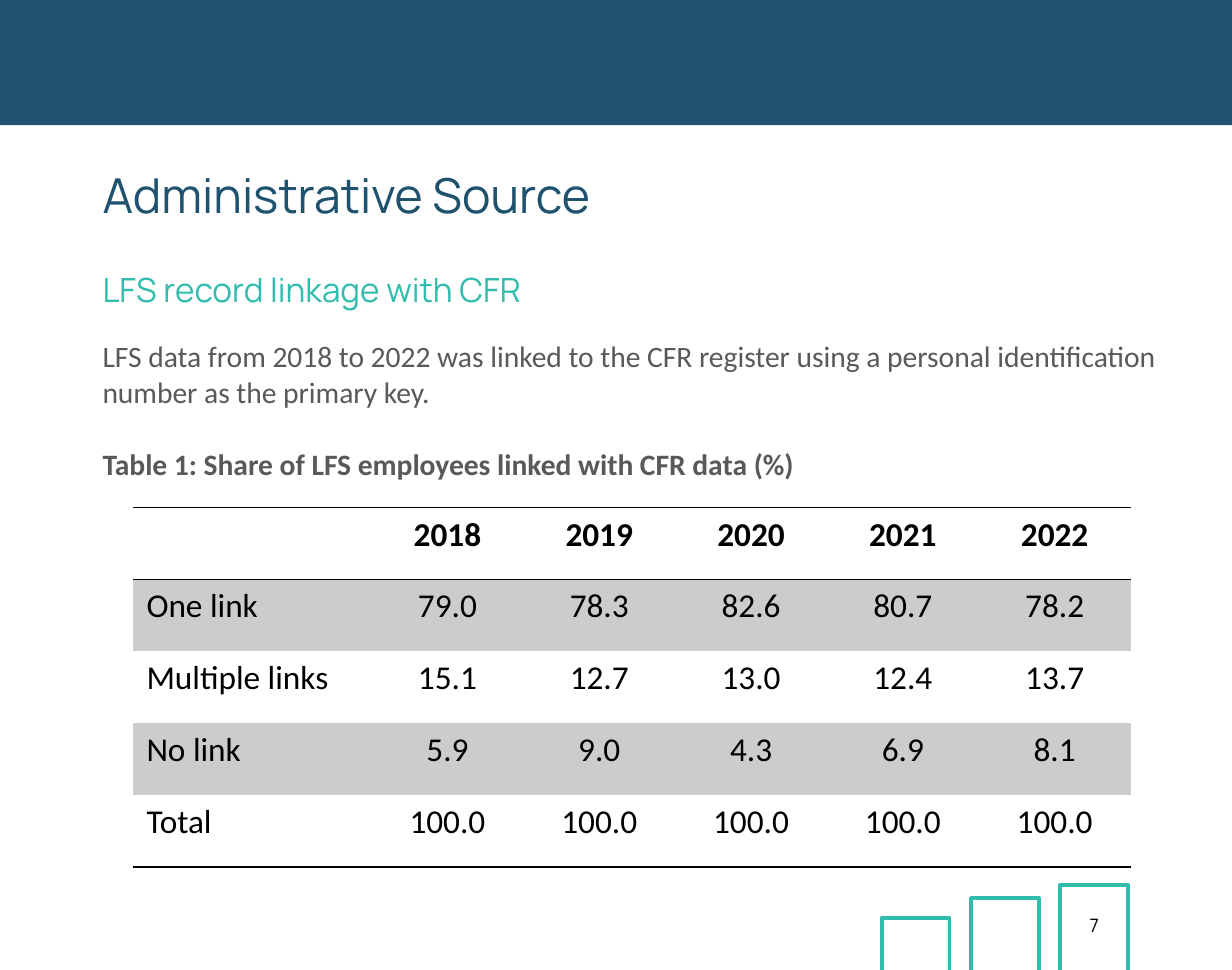
"""Build the slide on linking LFS records with the CFR register."""
from dataclasses import dataclass

from lxml import etree
from pptx import Presentation
from pptx import util as u
from pptx.dml.color import RGBColor
from pptx.enum import shapes, text
from pptx.oxml.ns import qn


@dataclass(frozen=True)
class Theme:
    navy: str = "1E526E"
    teal: str = "32BCAD"
    grey: str = "595959"
    black: str = "000000"
    band: str = "CCCCCC"
    heading_font: str = "Manrope"
    body_font: str = "Calibri"
    title: int = 26
    subtitle: int = 18
    body: int = 16
    cell: int = 18
    number: int = 10
    bar_line: int = 2
    rule: int = 1


THEME = Theme()
LEFT = 0.77
BAR_WIDTH, BAR_HEIGHT = 0.51, 0.81
BAR_LEFTS_TOPS = [(6.62, 6.89), (7.29, 6.74), (7.96, 6.64)]
LABEL_WIDTH, YEAR_WIDTH, ROW_HEIGHT = 1.79, 1.14, 0.54
LINKAGE = [
    ["", "2018", "2019", "2020", "2021", "2022"],
    ["One link", "79.0", "78.3", "82.6", "80.7", "78.2"],
    ["Multiple links", "15.1", "12.7", "13.0", "12.4", "13.7"],
    ["No link", "5.9", "9.0", "4.3", "6.9", "8.1"],
    ["Total", "100.0", "100.0", "100.0", "100.0", "100.0"],
]


def rgb(value):
    return RGBColor.from_string(value)


def style(p, size, font, color, bold=False):
    for r in p.runs:
        r.font.size = u.Pt(size)
        r.font.name = font
        r.font.color.rgb = rgb(color)
        r.font.bold = bold


def add_box(s, left, top, width, height, fill=None, line=None):
    sp = s.shapes.add_shape(shapes.MSO_SHAPE.RECTANGLE, u.Inches(left), u.Inches(top),
                            u.Inches(width), u.Inches(height))
    sp.shadow.inherit = False
    if fill:
        sp.fill.solid()
        sp.fill.fore_color.rgb = rgb(fill)
    else:
        sp.fill.background()
    if line:
        sp.line.color.rgb = rgb(line)
        sp.line.width = u.Pt(THEME.bar_line)
    else:
        sp.line.fill.background()


def add_text(s, left, top, width, height, lines, size, font, color):
    sp = s.shapes.add_textbox(u.Inches(left), u.Inches(top), u.Inches(width), u.Inches(height))
    tf = sp.text_frame
    tf.word_wrap = True
    tf.margin_left = tf.margin_right = tf.margin_top = tf.margin_bottom = 0
    tf.text = "\n".join(lines)
    for p in tf.paragraphs:
        style(p, size, font, color)
    return tf


def set_borders(cell, ruled_sides):
    tc_pr = cell._tc.get_or_add_tcPr()
    for side in "LRTB":
        ln = etree.SubElement(tc_pr, qn(f"a:ln{side}"))
        if side in ruled_sides:
            ln.set("w", str(u.Pt(THEME.rule)))
            fill = etree.SubElement(ln, qn("a:solidFill"))
            etree.SubElement(fill, qn("a:srgbClr")).set("val", THEME.black)
        else:
            ln.set("w", "0")
            etree.SubElement(ln, qn("a:noFill"))


def add_linkage_table(s, left, top, rows):
    row_count, col_count = len(rows), len(rows[0])
    width = LABEL_WIDTH + YEAR_WIDTH * (col_count - 1)
    table = s.shapes.add_table(row_count, col_count, u.Inches(left), u.Inches(top),
                               u.Inches(width), u.Inches(ROW_HEIGHT * row_count)).table
    table.first_row = table.horz_banding = False
    for j, column in enumerate(table.columns):
        column.width = u.Inches(YEAR_WIDTH if j else LABEL_WIDTH)
    ruled = {0: "TB", 1: "T", row_count - 1: "B"}
    for i, values in enumerate(rows):
        table.rows[i].height = u.Inches(ROW_HEIGHT)
        for j, value in enumerate(values):
            cell = table.cell(i, j)
            set_borders(cell, ruled.get(i, ""))
            if i % 2:
                cell.fill.solid()
                cell.fill.fore_color.rgb = rgb(THEME.band)
            else:
                cell.fill.background()
            cell.text_frame.text = value
            p = cell.text_frame.paragraphs[0]
            p.alignment = text.PP_ALIGN.CENTER if j else text.PP_ALIGN.LEFT
            style(p, THEME.cell, THEME.body_font, THEME.black, bold=i == 0)


def main():
    prs = Presentation()
    prs.slide_width, prs.slide_height = u.Inches(9.25), u.Inches(7.28)
    s = prs.slides.add_slide(prs.slide_layouts[6])

    add_box(s, -0.17, -0.11, 9.63, 1.05, fill=THEME.navy)
    for left, top in BAR_LEFTS_TOPS:
        add_box(s, left, top, BAR_WIDTH, BAR_HEIGHT, line=THEME.teal)

    add_text(s, LEFT, 1.24, 7.97, 0.5, ["Administrative Source"],
             THEME.title, THEME.heading_font, THEME.navy)
    add_text(s, LEFT, 2.02, 7.33, 0.3, ["LFS record linkage with CFR"],
             THEME.subtitle, THEME.heading_font, THEME.teal)
    body = add_text(s, LEFT, 2.54, 7.97, 1.1, [
        "LFS data from 2018 to 2022 was linked to the CFR register using a personal "
        "identification number as the primary key.",
        "Table 1: Share of LFS employees linked with CFR data (%)",
    ], THEME.body, THEME.body_font, THEME.grey)
    caption = body.paragraphs[1]
    caption.space_before = u.Pt(19.5)
    caption.runs[0].font.bold = True

    add_linkage_table(s, 1, 3.81, LINKAGE)

    number = add_text(s, BAR_LEFTS_TOPS[-1][0], 6.83, BAR_WIDTH, 0.19, ["7"],
                      THEME.number, THEME.heading_font, THEME.black).paragraphs[0]
    number.alignment = text.PP_ALIGN.CENTER
    number.line_spacing = u.Pt(14.2)
    prs.save("out.pptx")


if __name__ == "__main__":
    main()
